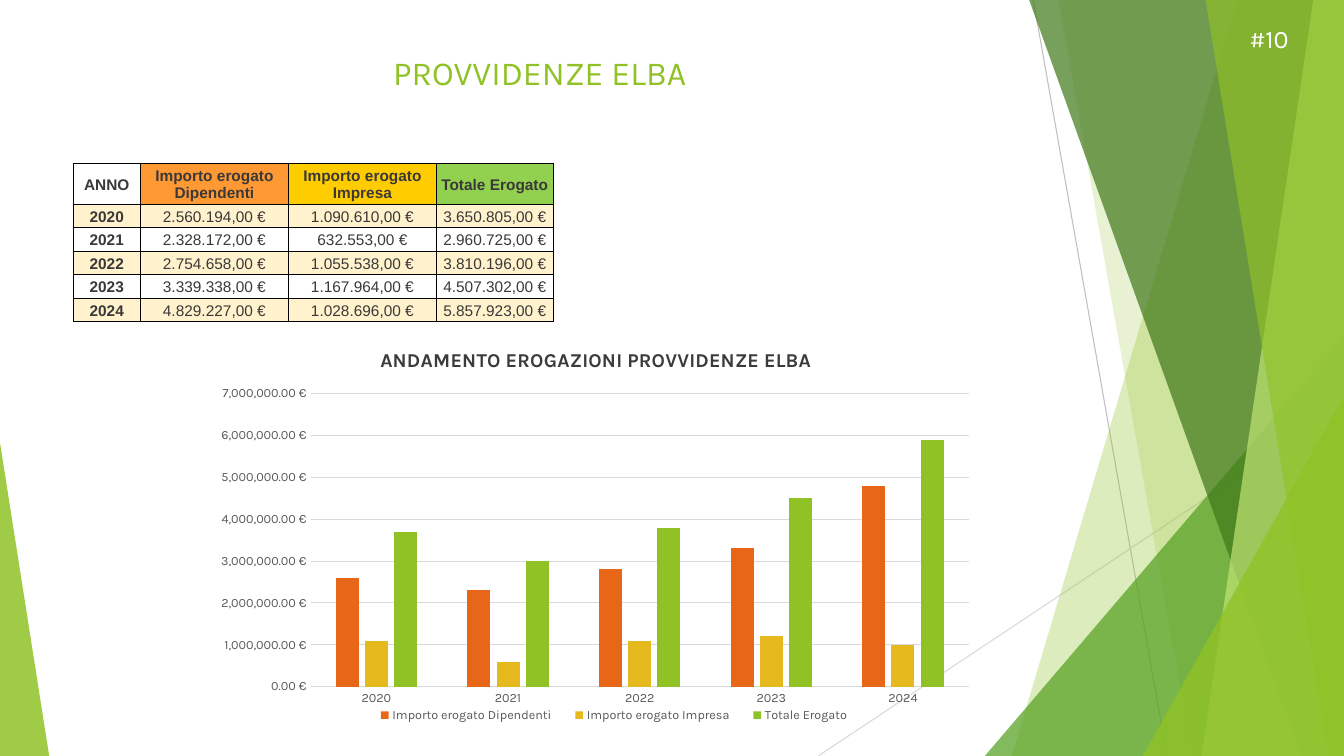
"""Build the slide on ELBA benefits: a table of yearly payments and a column chart."""
from lxml.etree import SubElement
from pptx import Presentation
from pptx.chart.data import CategoryChartData
from pptx.dml.color import RGBColor
from pptx.enum.chart import XL_CHART_TYPE, XL_LEGEND_POSITION, XL_TICK_MARK
from pptx.enum.shapes import MSO_CONNECTOR, MSO_SHAPE
from pptx.enum.text import MSO_ANCHOR, MSO_AUTO_SIZE, PP_ALIGN
from pptx.oxml import parse_xml
from pptx.oxml.ns import nsdecls, qn
from pptx.util import Cm, Pt

GREEN = "90C226"
WIDTH, HEIGHT = 33.87, 19.05


def color(code):
    return RGBColor.from_string(code)


def set_layout(parent, position, **values):
    for old in parent.findall(qn("c:layout")):
        parent.remove(old)
    layout = parse_xml(f'<c:layout {nsdecls("c")}><c:manualLayout/></c:layout>')
    for tag, value in values.items():
        SubElement(layout[0], qn(f"c:{tag}")).set("val", str(value))
    parent.insert(position, layout)


deck = Presentation()
deck.slide_width, deck.slide_height = Cm(WIDTH), Cm(HEIGHT)
page = deck.slides.add_slide(deck.slide_layouts[5])

rays = [(26.04, 0, 29.41, HEIGHT, "BFBFBF"), (WIDTH, 10.24, 20.62, HEIGHT, "D9D9D9")]
for left, top, right, bottom, code in rays:
    ray = page.shapes.add_connector(
        MSO_CONNECTOR.STRAIGHT, Cm(left), Cm(top), Cm(right), Cm(bottom))
    ray.line.color.rgb = color(code)
    ray.line.width = Pt(0.75)
    SubElement(ray.element.spPr, qn("a:effectLst"))

facets = [
    ("band", (31.19, 25.5), GREEN, 30),
    ("band", (26.67, 30.05), GREEN, 20),
    ("triangle", (24.82, 8.46, 9.05, 1), "54A021", 72),
    ("band", (25.93, 32.79), "3F7819", 70),
    ("band", (33.1, 30.28), "C0E474", 70),
    ("band", (30.38, 33.48), GREEN, 65),
    ("triangle", (28.8, 9.98, 5.07, 1), GREEN, 80),
    ("triangle", (0, 11.15, 1.24, 0), GREEN, 85),
]
for kind, place, code, opacity in facets:
    if kind == "band":
        top_x, bottom_x = place
        outline = page.shapes.build_freeform(Cm(top_x), Cm(-0.02), scale=1.0)
        corners = [(WIDTH, -0.02), (WIDTH, HEIGHT), (bottom_x, HEIGHT)]
        outline.add_line_segments([(Cm(x), Cm(y)) for x, y in corners], close=True)
        facet = outline.convert_to_shape()
    else:
        left, top, width, apex = place
        facet = page.shapes.add_shape(
            MSO_SHAPE.ISOSCELES_TRIANGLE, Cm(left), Cm(top), Cm(width), Cm(HEIGHT - top))
        facet.adjustments[0] = apex
    facet.shadow.inherit = False
    facet.fill.solid()
    facet.fill.fore_color.rgb = color(code)
    facet.line.fill.background()
    tint = facet.element.spPr.find(".//" + qn("a:srgbClr"))
    SubElement(tint, qn("a:alpha")).set("val", str(opacity * 1000))

title = page.shapes.title
title.left, title.top, title.width, title.height = Cm(9.65), Cm(0.94), Cm(10.06), Cm(1.52)
number = page.shapes.add_textbox(Cm(31.24), Cm(0.46), Cm(1.78), Cm(1.02))
labels = [
    (title, "PROVVIDENZE ELBA", 24, GREEN, MSO_ANCHOR.BOTTOM),
    (number, "#10", 18, "FFFFFF", MSO_ANCHOR.TOP),
]
for box, text, size, code, anchor in labels:
    frame = box.text_frame
    frame.text = text
    frame.word_wrap = True
    frame.auto_size = MSO_AUTO_SIZE.NONE
    frame.vertical_anchor = anchor
    para = frame.paragraphs[0]
    para.alignment = PP_ALIGN.LEFT
    para.font.name, para.font.size = "Karla", Pt(size)
    para.font.color.rgb = color(code)

headers = ["ANNO", "Importo erogato Dipendenti", "Importo erogato Impresa", "Totale Erogato"]
payments = {
    "2020": (2560194, 1090610, 3650805),
    "2021": (2328172, 632553, 2960725),
    "2022": (2754658, 1055538, 3810196),
    "2023": (3339338, 1167964, 4507302),
    "2024": (4829227, 1028696, 5857923),
}
rows = [headers]
for year, amounts in payments.items():
    rows.append([year] + [f"{amount:,}".replace(",", ".") + ",00 €" for amount in amounts])
header_fills = [None, "FF9933", "FFCC00", "92D050"]

table = page.shapes.add_table(
    len(rows), len(headers), Cm(1.84), Cm(4.11), Cm(12.1), Cm(3.99)).table
table.first_row = table.horz_banding = False
for column, width in zip(table.columns, [1.7, 3.73, 3.73, 2.94]):
    column.width = Cm(width)
for row_index, texts in enumerate(rows):
    table.rows[row_index].height = Cm(0.59 if row_index else 1.04)
    for column_index, text in enumerate(texts):
        cell = table.cell(row_index, column_index)
        cell.text = text
        cell.vertical_anchor = MSO_ANCHOR.MIDDLE
        cell.margin_left = cell.margin_right = cell.margin_top = Cm(0.05)
        cell.margin_bottom = 0
        para = cell.text_frame.paragraphs[0]
        para.alignment = PP_ALIGN.CENTER
        para.font.name, para.font.size = "Arial", Pt(11)
        para.font.bold = row_index == 0 or column_index == 0
        para.font.color.rgb = color("3A3838")
        for side in ("lnL", "lnR", "lnT", "lnB"):
            cell._tc.get_or_add_tcPr().append(parse_xml(
                f'<a:{side} {nsdecls("a")} w="6350"><a:solidFill>'
                f'<a:srgbClr val="000000"/></a:solidFill></a:{side}>'))
        body_fill = "FFF2CC" if row_index % 2 else None
        code = body_fill if row_index else header_fills[column_index]
        if code:
            cell.fill.solid()
            cell.fill.fore_color.rgb = color(code)
        else:
            cell.fill.background()

data = CategoryChartData()
data.categories = list(payments)
for name, amounts in zip(headers[1:], zip(*payments.values())):
    data.add_series(name, [round(amount, -5) for amount in amounts])
chart = page.shapes.add_chart(
    XL_CHART_TYPE.COLUMN_CLUSTERED, Cm(5.18), Cm(8.36), Cm(19.61), Cm(10.39), data).chart
chart.font.name, chart.font.size = "Karla", Pt(10)
chart.font.color.rgb = color("000000")

chart.has_title = True
heading = chart.chart_title.text_frame
heading.text = "ANDAMENTO EROGAZIONI PROVVIDENZE ELBA"
font = heading.paragraphs[0].font
font.name, font.size, font.bold = "Karla", Pt(14), True
font.color.rgb = color("3B3B3B")

plot = chart.plots[0]
plot.gap_width, plot.overlap = 219, -27
plot.vary_by_categories = False
for series, code in zip(plot.series, ["E76618", "E6B91E", GREEN]):
    series.format.fill.solid()
    series.format.fill.fore_color.rgb = color(code)

chart.has_legend = True
chart.legend.position = XL_LEGEND_POSITION.BOTTOM
chart.legend.include_in_layout = False
years, euros = chart.category_axis, chart.value_axis
for axis in (years, euros):
    axis.major_tick_mark = axis.minor_tick_mark = XL_TICK_MARK.NONE
for font in (years.tick_labels.font, euros.tick_labels.font, chart.legend.font):
    font.name, font.size = "Karla", Pt(9)
    font.color.rgb = color("595959")
euros.minimum_scale, euros.maximum_scale, euros.major_unit = 0, 7000000, 1000000
euros.tick_labels.number_format = '#,##0.00\\ "€"'
euros.tick_labels.number_format_is_linked = False
euros.format.line.fill.background()
for line in (years.format.line, euros.major_gridlines.format.line):
    line.color.rgb = color("D9D9D9")
    line.width = Pt(0.75)

set_layout(chart.chart_title._element, 1, xMode="edge", yMode="edge", x=0.22, y=0.03)
set_layout(chart._chartSpace.chart.plotArea, 0, layoutTarget="inner",
           xMode="edge", yMode="edge", x=0.135, y=0.15, w=0.846, h=0.711)
set_layout(chart.legend._element, 1, xMode="edge", yMode="edge", x=0.2, y=0.9, w=0.65, h=0.06)

deck.save("out.pptx")
